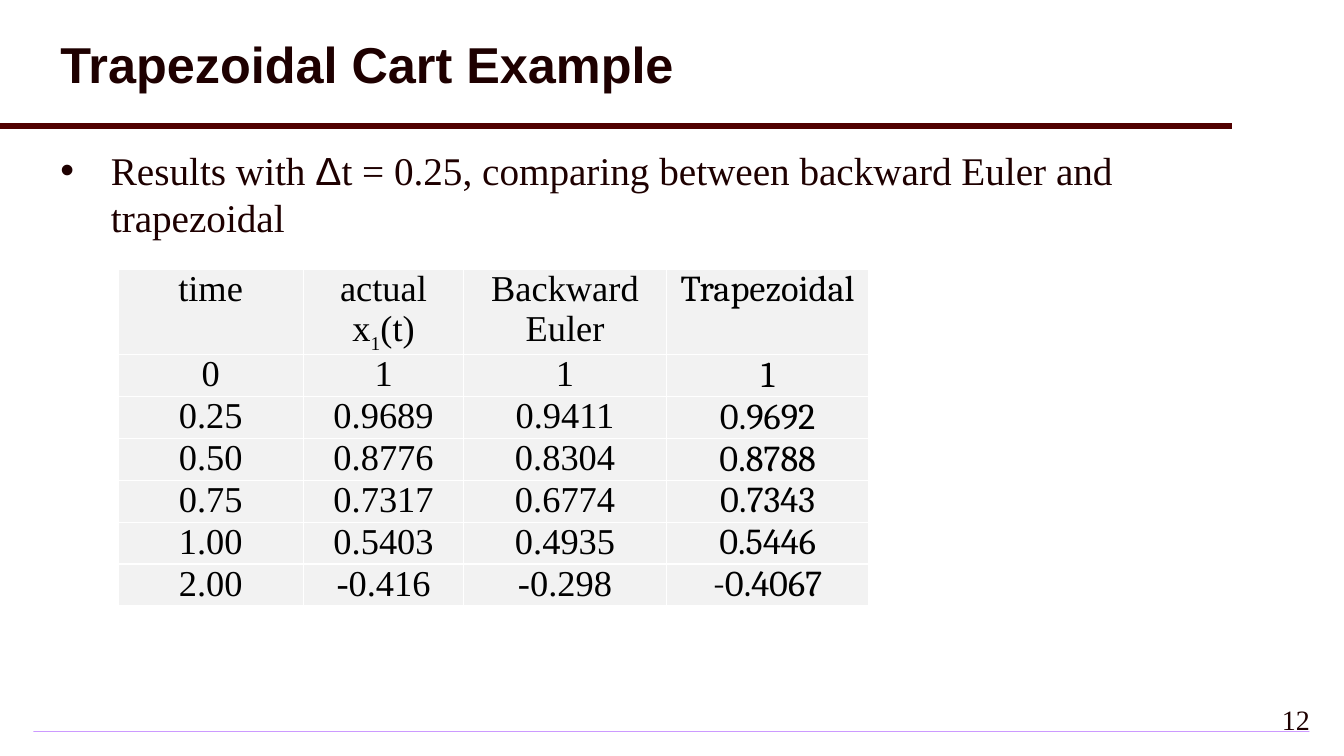
from pptx import Presentation
from pptx import oxml, util as u
from pptx.dml.color import RGBColor
from pptx.enum import shapes, text
from pptx.oxml import ns

COLORS = {"ink": "1E0000", "rule": "500000", "black": "000000",
          "cell": "F2F2F2", "white": "FFFFFF", "violet": "CC99FF", "lilac": "F3EBFF"}
SERIF, SANS, CAMBRIA = "Times New Roman", "Arial", "Cambria"

RESULTS = [
    ["time", "actual x1(t)", "Backward Euler", "Trapezoidal"],
    ["0", "1", "1", "1"],
    ["0.25", "0.9689", "0.9411", "0.9692"],
    ["0.50", "0.8776", "0.8304", "0.8788"],
    ["0.75", "0.7317", "0.6774", "0.7343"],
    ["1.00", "0.5403", "0.4935", "0.5446"],
    ["2.00", "-0.416", "-0.298", "-0.4067"],
]


class SlideBuilder:
    """Holds the style and the current slide, and adds each kind of element."""

    def __init__(self, presentation):
        self.slide = presentation.slides.add_slide(presentation.slide_layouts[1])

    def color(self, name):
        return RGBColor.from_string(COLORS[name])

    def element(self, xml):
        return oxml.parse_xml(xml.replace(" ", f" {ns.nsdecls('a')} ", 1))

    def place(self, shape, left, top, width, height):
        shape.left, shape.top = u.Inches(left), u.Inches(top)
        shape.width, shape.height = u.Inches(width), u.Inches(height)

    def style(self, run, size, font=SERIF, color="ink", bold=False):
        run.font.size, run.font.name, run.font.bold = u.Pt(size), font, bold
        run.font.color.rgb = self.color(color)

    def title(self, words, *box):
        shape = self.slide.shapes.title
        self.place(shape, *box)
        frame = shape.text_frame
        frame.text = words
        frame.auto_size = text.MSO_AUTO_SIZE.NONE
        frame.vertical_anchor = text.MSO_ANCHOR.MIDDLE
        paragraph = frame.paragraphs[0]
        paragraph.alignment = text.PP_ALIGN.LEFT
        paragraph.line_spacing = 0.9
        self.style(paragraph.runs[0], 36, SANS, bold=True)

    def bullet(self, parts, *box):
        shape = self.slide.placeholders[1]
        self.place(shape, *box)
        frame = shape.text_frame
        frame.auto_size = text.MSO_AUTO_SIZE.NONE
        paragraph = frame.paragraphs[0]
        properties = paragraph._p.get_or_add_pPr()
        properties.set("marL", str(u.Inches(0.5)))
        properties.set("indent", str(u.Inches(-0.5)))
        properties.append(self.element(
            f'<a:buClr ><a:srgbClr val="{COLORS["ink"]}"/></a:buClr>'))
        properties.append(self.element('<a:buFont typeface="Arial"/>'))
        properties.append(self.element('<a:buChar char="•"/>'))
        paragraph.space_before = u.Pt(0)
        for words, font in parts:
            run = paragraph.add_run()
            run.text = words
            self.style(run, 28, font)

    def rule(self, left, top, right, weight):
        line = self.slide.shapes.add_connector(
            shapes.MSO_CONNECTOR.STRAIGHT, u.Inches(left), u.Inches(top),
            u.Inches(right), u.Inches(top))
        line.line.color.rgb = self.color("rule")
        line.line.width = u.Pt(weight)
        line._element.spPr.append(self.element("<a:effectLst />"))

    def footer_bar(self, *box):
        bar = self.slide.shapes.add_shape(
            shapes.MSO_SHAPE.RECTANGLE, *map(u.Inches, box))
        bar.shadow.inherit = False
        bar.line.fill.background()
        bar.fill.gradient()
        gradient = bar._element.spPr.find(ns.qn("a:gradFill"))
        gradient.getparent().replace(gradient, self.element(
            '<a:gradFill rotWithShape="1"><a:gsLst>'
            f'<a:gs pos="0"><a:srgbClr val="{COLORS["violet"]}"/></a:gs>'
            f'<a:gs pos="100000"><a:srgbClr val="{COLORS["lilac"]}"/></a:gs>'
            '</a:gsLst><a:path path="shape">'
            '<a:fillToRect l="50000" t="50000" r="50000" b="50000"/>'
            '</a:path></a:gradFill>'))

    def page_number(self, words, *box):
        frame = self.slide.shapes.add_textbox(*map(u.Inches, box)).text_frame
        frame.word_wrap = True
        frame.text = words
        frame.paragraphs[0].alignment = text.PP_ALIGN.RIGHT
        self.style(frame.paragraphs[0].runs[0], 20)

    def cell(self, cell, words, font):
        cell.margin_left = cell.margin_right = u.Inches(0.07)
        cell.margin_top = cell.margin_bottom = 0
        cell.fill.solid()
        cell.fill.fore_color.rgb = self.color("cell")
        for index, side in enumerate("LRTB"):
            cell._tc.get_or_add_tcPr().insert(index, self.element(
                f'<a:ln{side} w="{u.Pt(1)}"><a:solidFill>'
                f'<a:srgbClr val="{COLORS["white"]}"/></a:solidFill></a:ln{side}>'))
        paragraph = cell.text_frame.paragraphs[0]
        paragraph.alignment = text.PP_ALIGN.CENTER
        before, subscript, after = words.partition("x1")
        parts = [before + "x", "1", after] if subscript else [words]
        for index, part in enumerate(parts):
            run = paragraph.add_run()
            run.text = part
            self.style(run, 24 if index == 1 else 26, font, "black")
            if index == 1:
                run.font._element.set("baseline", "-25000")

    def table(self, rows, widths, left, top, header_height, row_height):
        heights = [header_height] + [row_height] * (len(rows) - 1)
        table = self.slide.shapes.add_table(
            len(rows), len(widths), u.Inches(left), u.Inches(top),
            u.Inches(sum(widths)), u.Inches(sum(heights))).table
        table.first_row = table.horz_banding = False
        for column, width in zip(table.columns, widths):
            column.width = u.Inches(width)
        for row, height, values in zip(table.rows, heights, rows):
            row.height = u.Inches(height)
            for index, value in enumerate(values):
                last = index == len(values) - 1
                self.cell(row.cells[index], value, CAMBRIA if last else SERIF)


def main():
    presentation = Presentation()
    presentation.slide_width = u.Inches(13.33)
    presentation.slide_height = u.Inches(7.5)
    builder = SlideBuilder(presentation)
    builder.footer_bar(0.33, 7.25, 12.66, 0.01)
    builder.rule(0, 1.25, 12.22, 4)
    builder.title("Trapezoidal Cart Example", 0.5, 0.08, 12.67, 1.17)
    builder.bullet(
        [("Results with ", SERIF), ("Δ", SANS),
         ("t = 0.25, comparing between backward Euler and trapezoidal", SERIF)],
        0.5, 1.4, 11.25, 1.18)
    builder.table(RESULTS, [1.84, 1.59, 2.01, 2.01], 1.17, 2.67, 0.84, 0.41)
    builder.page_number("12", 12.42, 6.92, 0.67, 0.5)
    presentation.save("out.pptx")


if __name__ == "__main__":
    main()
